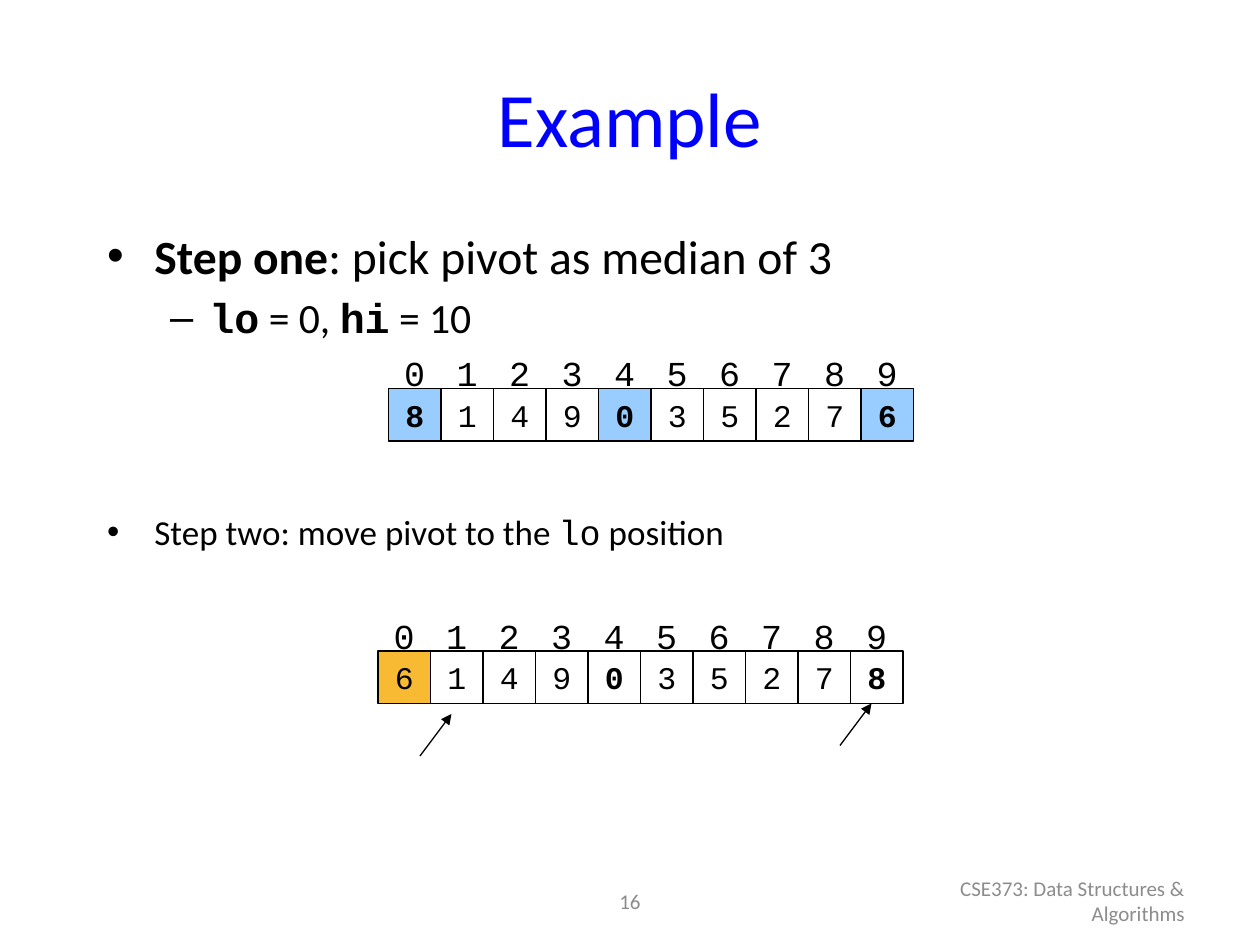
"""Build the quicksort pivot example slide."""
from dataclasses import dataclass

from lxml import etree
from pptx import Presentation
from pptx import util as u
from pptx.dml.color import RGBColor
from pptx.enum import shapes, text
from pptx.oxml import ns

SCALE = 7620
CELL = 50
LABEL_RISE = 40


@dataclass(frozen=True)
class Theme:
    sans: str = "Calibri"
    mono: str = "Courier New"
    black: str = "000000"
    title: str = "0000FF"
    footer: str = "8C8C8C"
    sampled: str = "99CCFF"
    pivot: str = "F8B933"
    title_size: float = 44
    step_size: float = 27.2
    detail_size: float = 23.8
    label_size: float = 20
    cell_size: float = 18
    footer_size: float = 12
    line: float = 0.75


THEME = Theme()


@dataclass(frozen=True)
class Span:
    words: str
    size: float
    font: str = THEME.sans
    color: str = THEME.black
    bold: bool = False


@dataclass(frozen=True)
class Box:
    left: int
    top: int
    width: int
    height: int

    def emu(self) -> list[int]:
        return [px(side) for side in (self.left, self.top, self.width, self.height)]


@dataclass(frozen=True)
class ArrayRow:
    left: int
    top: int
    values: str
    bold: tuple[int, ...]
    filled: tuple[int, ...]
    fill: str


@dataclass(frozen=True)
class Arrow:
    left: int
    top: int
    width: int = 30
    height: int = 40


def px(length: int) -> int:
    return u.Emu(length * SCALE)


def add_spans(para, spans: list[Span]) -> None:
    for span in spans:
        run = para.add_run()
        run.text = span.words
        run.font.name = span.font
        run.font.size = u.Pt(span.size)
        run.font.bold = span.bold
        run.font.color.rgb = RGBColor.from_string(span.color)


def fill_placeholder(holder, box: Box, paras: list[list[Span]]) -> None:
    holder.left, holder.top, holder.width, holder.height = box.emu()
    frame = holder.text_frame
    frame.auto_size = text.MSO_AUTO_SIZE.NONE
    for level, spans in enumerate(paras):
        para = frame.add_paragraph() if level else frame.paragraphs[0]
        para.level = level
        add_spans(para, spans)


def set_middle_text(shape, span: Span, align, wrap: bool) -> None:
    frame = shape.text_frame
    frame.word_wrap = wrap
    frame.vertical_anchor = text.MSO_ANCHOR.MIDDLE
    frame.paragraphs[0].alignment = align
    add_spans(frame.paragraphs[0], [span])


def add_label(page, box: Box, span: Span, align=text.PP_ALIGN.CENTER, wrap: bool = False) -> None:
    set_middle_text(page.shapes.add_textbox(*box.emu()), span, align, wrap)


def add_cell(page, box: Box, span: Span, fill: str | None) -> None:
    cell = page.shapes.add_shape(shapes.MSO_SHAPE.RECTANGLE, *box.emu())
    cell.shadow.inherit = False
    if fill:
        cell.fill.solid()
        cell.fill.fore_color.rgb = RGBColor.from_string(fill)
    else:
        cell.fill.background()
    cell.line.color.rgb = RGBColor.from_string(THEME.black)
    cell.line.width = u.Pt(THEME.line)
    set_middle_text(cell, span, text.PP_ALIGN.CENTER, False)


def add_array(page, row: ArrayRow) -> None:
    for index, value in enumerate(row.values):
        left = row.left + index * CELL
        span = Span(value, THEME.cell_size, THEME.mono, bold=index in row.bold)
        fill = row.fill if index in row.filled else None
        add_cell(page, Box(left, row.top, CELL, CELL), span, fill)
        label = Span(str(index), THEME.label_size, THEME.mono)
        add_label(page, Box(left, row.top - LABEL_RISE, CELL, CELL), label)


def add_arrow(page, arrow: Arrow) -> None:
    line = page.shapes.add_connector(
        shapes.MSO_CONNECTOR.STRAIGHT,
        px(arrow.left), px(arrow.top + arrow.height),
        px(arrow.left + arrow.width), px(arrow.top),
    )
    line.line.color.rgb = RGBColor.from_string(THEME.black)
    line.line.width = u.Pt(THEME.line)
    etree.SubElement(line.line._get_or_add_ln(), ns.qn("a:tailEnd"), type="triangle")
    etree.SubElement(line._element.spPr, ns.qn("a:effectLst"))


def main() -> None:
    deck = Presentation()
    deck.slide_width, deck.slide_height = px(1200), px(900)
    page = deck.slides.add_slide(deck.slide_layouts[3])
    title, step_one, step_two = page.placeholders

    fill_placeholder(title, Box(60, 36, 1080, 150),
                     [[Span("Example", THEME.title_size, color=THEME.title)]])
    fill_placeholder(step_one, Box(90, 210, 1020, 110), [
        [Span("Step one", THEME.step_size, bold=True),
         Span(": pick pivot as median of 3", THEME.step_size)],
        [Span("lo", THEME.detail_size, THEME.mono, bold=True),
         Span(" = 0, ", THEME.detail_size),
         Span("hi", THEME.detail_size, THEME.mono, bold=True),
         Span(" = 10", THEME.detail_size)],
    ])
    fill_placeholder(step_two, Box(90, 480, 1020, 110), [
        [Span("Step two: move pivot to the ", THEME.label_size),
         Span("lo", THEME.label_size, THEME.mono),
         Span(" position", THEME.label_size)],
    ])

    add_label(page, Box(410, 834, 380, 48),
              Span("16", THEME.footer_size, color=THEME.footer), wrap=True)
    add_label(page, Box(860, 834, 280, 48),
              Span("CSE373: Data Structures & Algorithms", THEME.footer_size, color=THEME.footer),
              text.PP_ALIGN.RIGHT, wrap=True)

    add_array(page, ArrayRow(360, 620, "6149035278", (4, 9), (0,), THEME.pivot))
    for arrow in (Arrow(400, 680), Arrow(800, 670)):
        add_arrow(page, arrow)
    add_array(page, ArrayRow(370, 370, "8149035276", (0, 4, 9), (0, 4, 9), THEME.sampled))
    deck.save("out.pptx")


if __name__ == "__main__":
    main()
